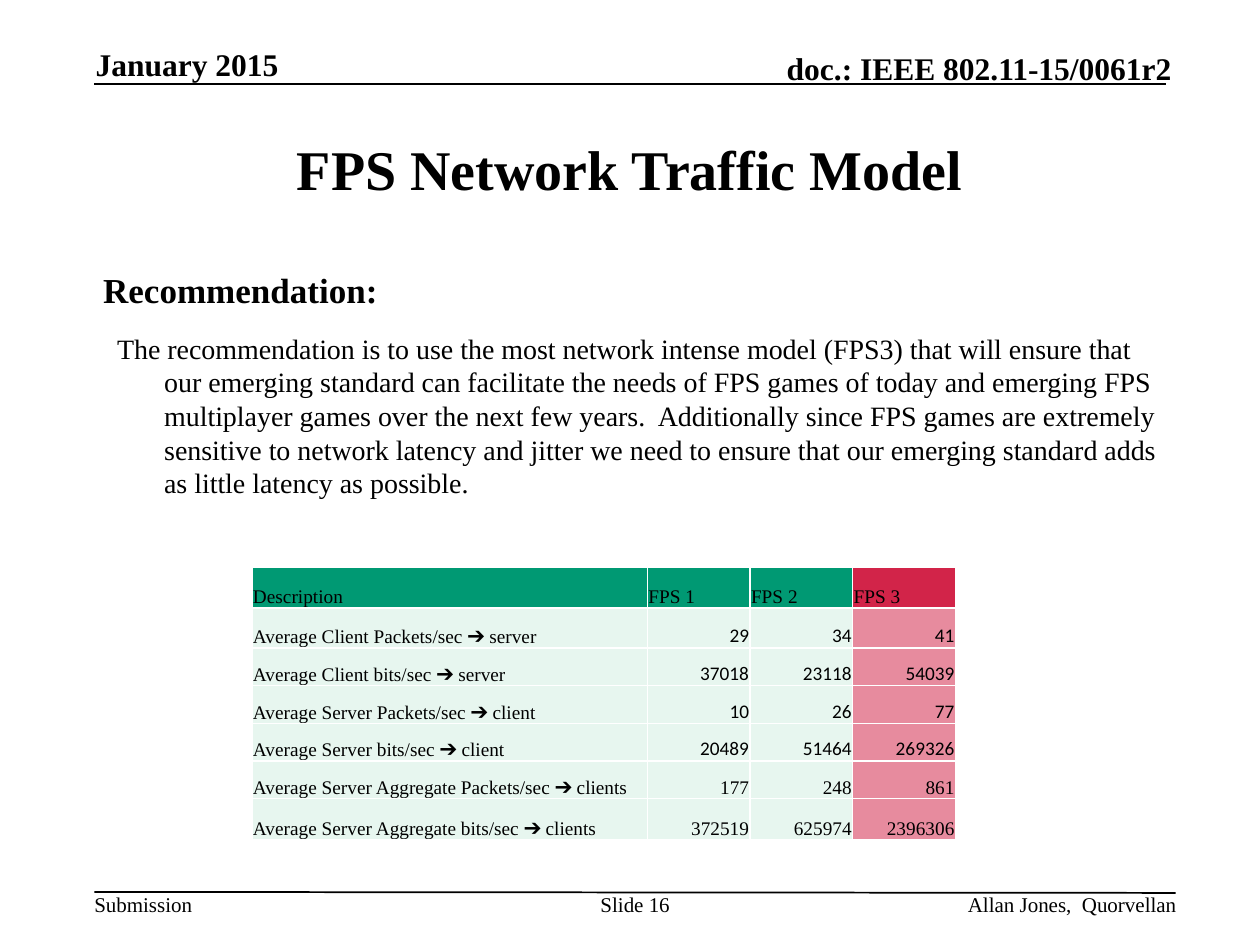
import pptx
import pptx.dml.color
import pptx.enum.shapes
import pptx.enum.text
import pptx.oxml
import pptx.oxml.ns
import pptx.util

Cm = pptx.util.Cm
Pt = pptx.util.Pt
ALIGN = pptx.enum.text.PP_ALIGN
ANCHOR = pptx.enum.text.MSO_ANCHOR

COLORS = {
    "text": "000000",
    "border": "FFFFFF",
    "header": "009973",
    "body": "E7F6EF",
    "highlight": "D22449",
}
SERIF = "Times New Roman"
SANS = "Calibri"
HANGING = Cm(0.95)
HIGHLIGHT_ALPHA = 53

COLUMN_WIDTHS = [7.97, 2.07, 2.07, 2.07]
ROW_HEIGHTS = [0.83, 0.8, 0.76, 0.76, 0.76, 0.76, 0.83]
TRAFFIC = [
    ["Description", "FPS 1", "FPS 2", "FPS 3"],
    ["Average Client Packets/sec ➔ server", "29", "34", "41"],
    ["Average Client bits/sec ➔ server", "37018", "23118", "54039"],
    ["Average Server Packets/sec ➔ client", "10", "26", "77"],
    ["Average Server bits/sec ➔ client", "20489", "51464", "269326"],
    ["Average Server Aggregate Packets/sec ➔ clients", "177", "248", "861"],
    ["Average Server Aggregate bits/sec ➔ clients", "372519", "625974", "2396306"],
]
CALIBRI_ROWS = range(1, 5)

RECOMMENDATION = (
    "The recommendation is to use the most network intense model (FPS3) that will "
    "ensure that our emerging standard can facilitate the needs of FPS games of today "
    "and emerging FPS multiplayer games over the next few years.  Additionally since "
    "FPS games are extremely sensitive to network latency and jitter we need to ensure "
    "that our emerging standard adds as little latency as possible."
)


def rgb(name):
    return pptx.dml.color.RGBColor.from_string(COLORS[name])


def apply(target, values):
    for name, value in values.items():
        setattr(target, name, value)


def write(frame, text, size, bold=False, font=SERIF, **paragraph_format):
    para = frame.paragraphs[0]
    apply(para, paragraph_format)
    span = para.add_run()
    span.text = text
    apply(span.font, {"size": Pt(size), "name": font, "bold": bold})
    span.font.color.rgb = rgb("text")
    return para


def add_text(page, place, text, size, margins=(0, 0), anchor=ANCHOR.TOP, wrap=True, **style):
    box = page.shapes.add_textbox(*map(Cm, place))
    side, edge = map(Cm, margins)
    apply(box.text_frame, {
        "word_wrap": wrap,
        "vertical_anchor": anchor,
        "margin_left": side,
        "margin_right": side,
        "margin_top": edge,
        "margin_bottom": edge,
    })
    return write(box.text_frame, text, size, **style)


def add_hanging_text(page, place, text, size, **style):
    para = add_text(page, place, text, size, (0.25, 0.13), space_before=Pt(6), **style)
    properties = para._p.get_or_add_pPr()
    properties.set("marL", str(HANGING))
    properties.set("indent", str(-HANGING))


def add_rule(page, left, top, right, bottom):
    rule = page.shapes.add_connector(
        pptx.enum.shapes.MSO_CONNECTOR.STRAIGHT, Cm(left), Cm(top), Cm(right), Cm(bottom))
    rule.line.color.rgb = rgb("text")
    rule.line.width = Pt(1)
    rule._element.spPr.append(pptx.oxml.parse_xml(
        f"<a:effectLst {pptx.oxml.ns.nsdecls('a')}/>"))


def add_borders(cell):
    properties = cell._tc.get_or_add_tcPr()
    for position, side in enumerate(("lnL", "lnR", "lnT", "lnB")):
        properties.insert(position, pptx.oxml.parse_xml(
            f'<a:{side} {pptx.oxml.ns.nsdecls("a")} w="{Pt(1)}"><a:solidFill>'
            f'<a:srgbClr val="{COLORS["border"]}"/></a:solidFill></a:{side}>'))


def fill_cell(cell, is_header, is_highlight):
    cell.fill.solid()
    name = "highlight" if is_highlight else "header" if is_header else "body"
    cell.fill.fore_color.rgb = rgb(name)
    if is_highlight and not is_header:
        color = cell._tc.tcPr.find(".//" + pptx.oxml.ns.qn("a:srgbClr"))
        color.append(pptx.oxml.parse_xml(
            f'<a:alpha {pptx.oxml.ns.nsdecls("a")} val="{HIGHLIGHT_ALPHA * 1000}"/>'))


def add_traffic_table(page, left, top):
    table = page.shapes.add_table(
        len(TRAFFIC), len(COLUMN_WIDTHS), Cm(left), Cm(top),
        Cm(sum(COLUMN_WIDTHS)), Cm(sum(ROW_HEIGHTS))).table
    for column, width in zip(table.columns, COLUMN_WIDTHS):
        column.width = Cm(width)
    for row, height in zip(table.rows, ROW_HEIGHTS):
        row.height = Cm(height)
    for r, values in enumerate(TRAFFIC):
        for c, value in enumerate(values):
            cell = table.cell(r, c)
            apply(cell, {
                "vertical_anchor": ANCHOR.BOTTOM,
                "margin_left": Cm(0.02),
                "margin_right": Cm(0.02),
                "margin_top": Cm(0.02),
                "margin_bottom": 0,
            })
            is_number = r > 0 and c > 0
            write(cell.text_frame, value, 11,
                  font=SANS if is_number and r in CALIBRI_ROWS else SERIF,
                  alignment=ALIGN.RIGHT if is_number else ALIGN.LEFT)
            fill_cell(cell, r == 0, c == len(values) - 1)
            add_borders(cell)


def main():
    deck = pptx.Presentation()
    deck.slide_width, deck.slide_height = Cm(25.4), Cm(19.05)
    page = deck.slides.add_slide(deck.slide_layouts[6])

    add_rule(page, 1.9, 1.7, 23.5, 1.7)
    add_rule(page, 1.9, 17.98, 23.7, 18)
    add_text(page, (1.93, 0.91, 5.2, 0.76), "January 2015", 18,
             anchor=ANCHOR.BOTTOM, bold=True)
    add_text(page, (13.89, 0.99, 9.73, 0.76), "doc.: IEEE 802.11-15/0061r2", 18,
             anchor=ANCHOR.BOTTOM, bold=True, alignment=ALIGN.RIGHT)
    add_text(page, (1.9, 17.98, 1.98, 0.51), "Submission", 12, wrap=False)
    add_text(page, (12.07, 17.98, 1.47, 1.02), "Slide 16", 12, alignment=ALIGN.CENTER)
    add_text(page, (14.88, 17.98, 8.84, 0.51), "Allan Jones,  Quorvellan", 12,
             alignment=ALIGN.RIGHT)

    add_text(page, (1.9, 1.9, 21.6, 2.97), "FPS Network Traffic Model", 32, (0.25, 0.13),
             anchor=ANCHOR.MIDDLE, bold=True, alignment=ALIGN.CENTER)
    add_hanging_text(page, (1.83, 5.28, 21.6, 1.27), "Recommendation:", 20, bold=True)
    add_hanging_text(page, (2.11, 6.55, 21.6, 3.91), RECOMMENDATION, 16)
    add_traffic_table(page, 5.08, 11.43)

    deck.save("out.pptx")


if __name__ == "__main__":
    main()
